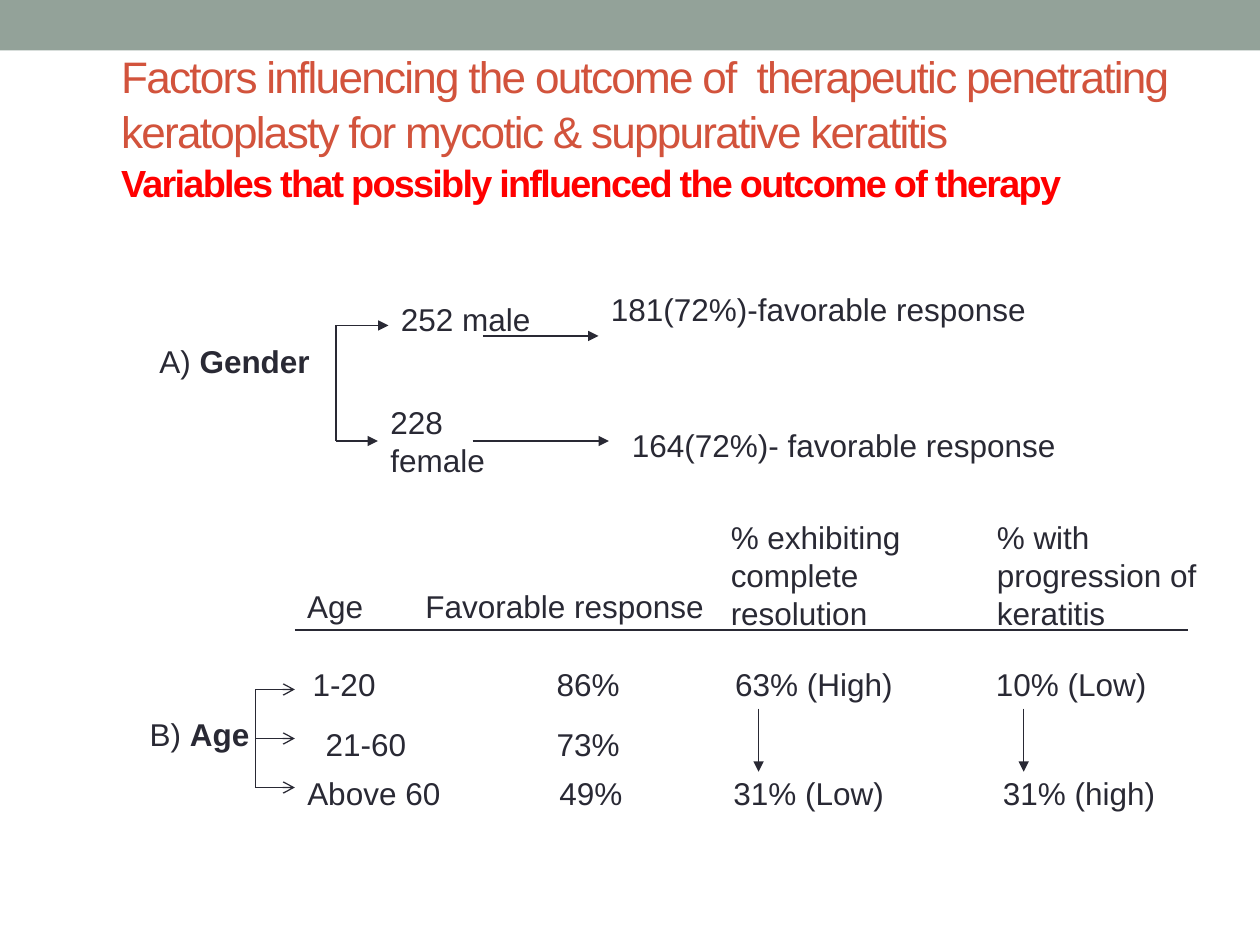
"""Build a slide on the variables that influenced the outcome of keratitis therapy."""
from lxml.etree import SubElement
from pptx import Presentation
from pptx.dml.color import RGBColor
from pptx.enum.shapes import MSO_CONNECTOR, MSO_SHAPE
from pptx.enum.text import MSO_ANCHOR, MSO_AUTO_SIZE, PP_ALIGN
from pptx.oxml.ns import qn
from pptx.util import Pt

THEME = {
    "font": "Arial", "ink": "292934", "bar": "93A299", "head": "D2533C", "alert": "FF0000",
    "title": 25.2, "sub": 21.6, "body": 18, "line": 0.75, "track": -100,
}
SIZE = (720, 540)
BAR = (0, 0, 720, 28.8)
TITLE_BOX = (62, 11.5, 628, 80)
TITLE = "Factors influencing the outcome of  therapeutic penetrating keratoplasty for mycotic & suppurative keratitis"
SUB = "Variables that possibly influenced the outcome of therapy"

FEMALE = "228 female"
LABELS = [
    ("A) ", "Gender", (84, 192, 150, 29)),
    ("252 male", "", (222, 168, 96, 29)),
    (FEMALE, "", (216, 227, 96, 50)),
    ("181(72%)-favorable response", "", (342, 162, 306, 29)),
    ("164(72%)- favorable response", "", (354, 240, 312, 29)),
    ("B) ", "Age", (78.5, 405, 108, 29)),
    ("Age", "", (168.5, 332, 108, 29)),
    ("Favorable response", "", (236, 332, 204, 29)),
    ("% exhibiting complete resolution", "", (410.5, 292.5, 144, 72)),
    ("% with progression of keratitis", "", (562.5, 292.5, 137.5, 72)),
]
CELL = (112, 29)
ROWS = [
    (376.5, [("1-20", 171.5), ("86%", 311), ("63% (High)", 413), ("10% (Low)", 562)]),
    (410.5, [("21-60", 179), ("73%", 311)]),
    (438.5, [("Above 60", 168.5), ("49%", 312.5), ("31% (Low)", 412), ("31% (high)", 566)]),
]

FORK = (192, 186, 252)
STEM = (146, 394, 450)
LINES = [
    ((FORK[0], FORK[1]), (FORK[0], FORK[2]), None),
    ((FORK[0], FORK[1]), (222, FORK[1]), "triangle"),
    ((276, 192), (342, 192), "triangle"),
    ((270, 252), (348, 252), "triangle"),
    ((168.5, 360), (679, 360), None),
    ((STEM[0], STEM[1]), (STEM[0], STEM[2]), None),
]
LINES += [((STEM[0], y), (168.5, y), "arrow") for y in (STEM[1], sum(STEM[1:]) / 2, STEM[2])]
LINES += [((x, 405), (x, 441), "triangle") for x in (433.5, 585)]


def color(name):
    return RGBColor.from_string(THEME[name])


def place(shape, box):
    shape.left, shape.top, shape.width, shape.height = map(Pt, box)


def add_bar(slide):
    bar = slide.shapes.add_shape(MSO_SHAPE.RECTANGLE, *map(Pt, BAR))
    bar.shadow.inherit = False
    bar.fill.solid()
    bar.fill.fore_color.rgb = color("bar")
    bar.line.fill.background()


def add_title(slide):
    title = slide.shapes.title
    place(title, TITLE_BOX)
    frame = title.text_frame
    frame.word_wrap = True
    frame.auto_size = MSO_AUTO_SIZE.NONE
    frame.vertical_anchor = MSO_ANCHOR.TOP
    frame.margin_top = Pt(15)
    para = frame.paragraphs[0]
    para.alignment = PP_ALIGN.LEFT
    para.line_spacing = 1.05
    para.font.name = THEME["font"]
    for text, size, ink, bold in [(TITLE, "title", "head", False), (SUB, "sub", "alert", True)]:
        if para.runs:
            para.add_line_break()
        run = para.add_run()
        run.text = text
        run.font.size = Pt(THEME[size])
        run.font.color.rgb = color(ink)
        run.font.bold = bold
        run.font._element.set("spc", str(THEME["track"]))


def add_label(slide, text, strong, box):
    label = slide.shapes.add_textbox(*map(Pt, box))
    label.text_frame.word_wrap = True
    para = label.text_frame.paragraphs[0]
    para.font.name = THEME["font"]
    para.font.size = Pt(THEME["body"])
    para.font.color.rgb = color("ink")
    para.add_run().text = text
    if strong:
        run = para.add_run()
        run.text = strong
        run.font.bold = True
    return label


def add_line(slide, start, end, tip):
    line = slide.shapes.add_connector(MSO_CONNECTOR.STRAIGHT, *map(Pt, start + end))
    line.line.color.rgb = color("ink")
    line.line.width = Pt(THEME["line"])
    if tip:
        SubElement(line.line._get_or_add_ln(), qn("a:tailEnd"), type=tip)
    SubElement(line._element.spPr, qn("a:effectLst"))
    return line


def main():
    deck = Presentation()
    deck.slide_width, deck.slide_height = map(Pt, SIZE)
    slide = deck.slides.add_slide(deck.slide_layouts[5])
    add_bar(slide)
    add_title(slide)
    labels = {text: add_label(slide, text, strong, box) for text, strong, box in LABELS}
    for top, cells in ROWS:
        for text, left in cells:
            add_label(slide, text, "", (left, top) + CELL)
    for start, end, tip in LINES:
        add_line(slide, start, end, tip)
    branch = add_line(slide, (FORK[0], FORK[2]), (216, FORK[2]), "triangle")
    branch.end_connect(labels[FEMALE], 1)
    deck.save("out.pptx")


if __name__ == "__main__":
    main()
